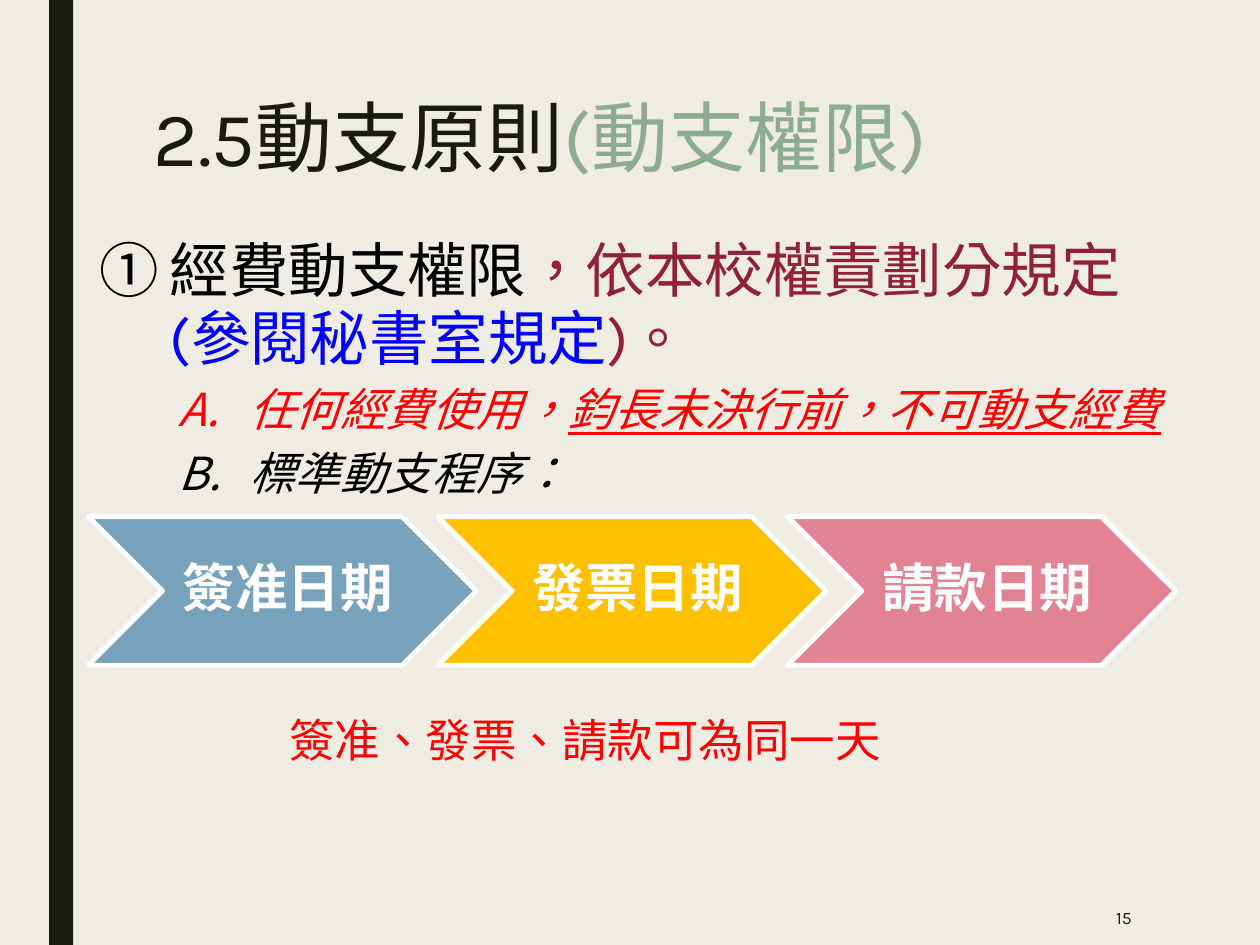
from lxml.etree import SubElement
from pptx import Presentation
from pptx.dml.color import RGBColor
from pptx.enum.lang import MSO_LANGUAGE_ID as Lang
from pptx.enum.shapes import MSO_SHAPE as Shape
from pptx.enum.text import MSO_ANCHOR as Anchor, PP_ALIGN as Align
from pptx.oxml.ns import qn
from pptx.util import Inches, Pt

CREAM = RGBColor(0xEF, 0xED, 0xE3)
DARK = RGBColor(0x19, 0x1B, 0x0E)
SAGE = RGBColor(0x8D, 0xAB, 0x8E)
WINE = RGBColor(0x91, 0x22, 0x36)
BLACK = RGBColor(0, 0, 0)
BLUE = RGBColor(0, 0, 0xFF)
RED = RGBColor(0xFF, 0, 0)
WHITE = RGBColor(0xFF, 0xFF, 0xFF)
STEEL = RGBColor(0x77, 0xA2, 0xBB)
GOLD = RGBColor(0xFF, 0xC0, 0)
ROSE = RGBColor(0xE2, 0x83, 0x94)


class Deck:
    """Draws styled elements on a slide ruled in 100 columns and 75 rows."""

    def __init__(self):
        self.prs = Presentation()
        self.prs.slide_width, self.prs.slide_height = Inches(10), Inches(7.5)
        self.col = self.prs.slide_width / 100
        self.row = self.prs.slide_height / 75
        self.font = "Karla"
        self.slide = self.prs.slides.add_slide(self.prs.slide_layouts[6])
        fill = self.slide.background.fill
        fill.solid()
        fill.fore_color.rgb = CREAM

    def place(self, x, y, w, h):
        return [int(n) for n in (x * self.col, y * self.row, w * self.col, h * self.row)]

    def style(self, run, size, color, font=None, bold=None, italic=None, under=None):
        face = run.font
        face.name, face.size, face.color.rgb = font or self.font, Pt(size), color
        face.bold, face.italic, face.underline = bold, italic, under
        face.language_id = Lang.TRADITIONAL_CHINESE

    def shape(self, kind, box, fill):
        shape = self.slide.shapes.add_shape(kind, *self.place(*box))
        shape.shadow.inherit = False
        shape.fill.solid()
        shape.fill.fore_color.rgb = fill
        shape.line.fill.background()
        return shape

    def text(self, box, anchor=Anchor.TOP):
        frame = self.slide.shapes.add_textbox(*self.place(*box)).text_frame
        frame.word_wrap, frame.vertical_anchor = True, anchor
        return frame

    def runs(self, para, size, parts, italic=None, space=None):
        para.line_spacing = space
        for words, color, under in parts:
            run = para.add_run()
            run.text = words
            self.style(run, size, color, italic=italic, under=under)

    def label(self, box, words, size, color, align):
        para = self.text(box, Anchor.MIDDLE).paragraphs[0]
        para.text, para.alignment = words, align
        self.style(para.runs[0], size, color)

    def number(self, para, kind, left, level, before):
        para.level, para.space_before, para.space_after = level, Pt(before), Pt(2)
        props = para._p.get_or_add_pPr()
        props.set("marL", str(Inches(left)))
        props.set("indent", str(Inches(-0.56)))
        SubElement(props, qn("a:buFont"), typeface="+mj-lt")
        SubElement(props, qn("a:buAutoNum"), type=kind)

    def step(self, box, words, fill):
        shape = self.shape(Shape.CHEVRON, box, fill)
        shape.line.color.rgb, shape.line.width = WHITE, Pt(2.75)
        frame = shape.text_frame
        frame.text, frame.word_wrap = words, True
        frame.vertical_anchor = Anchor.MIDDLE
        frame.margin_left = Inches(0.13)
        frame.margin_right = frame.margin_top = frame.margin_bottom = Inches(0.04)
        para = frame.paragraphs[0]
        para.alignment, para.line_spacing = Align.CENTER, 0.9
        self.style(para.runs[0], 30, WHITE, "Noto Sans CJK SC", bold=True)


def main():
    deck = Deck()
    deck.shape(Shape.RECTANGLE, (3.9, 0, 1.9, 75), DARK)

    title = deck.text((11.2, 7.5, 78.8, 16.2))
    deck.runs(title.paragraphs[0], 44,
              [("2.5動支原則", DARK, None), ("(動支權限)", SAGE, None)], space=0.89)

    body = deck.text((6.9, 18.5, 86.2, 47.6))
    rule = body.paragraphs[0]
    deck.number(rule, "circleNumWdWhitePlain", 0.56, 0, 10)
    deck.runs(rule, 34, [("經費動支權限", BLACK, None), ("，依本校權責劃分規定", WINE, None),
                         ("(參閱秘書室規定", BLUE, None), (")。", WINE, None)], space=0.94)
    points = [
        [("任何經費使用，", RED, None), ("鈞長未決行前，不可動支經費", RED, True)],
        [("標準動支程序：", BLACK, None)],
    ]
    for parts in points:
        para = body.add_paragraph()
        deck.number(para, "alphaUcPeriod", 1.19, 1, 5)
        deck.runs(para, 26, parts, italic=True, space=0.94)

    steps = [("簽准日期", STEEL), ("發票日期", GOLD), ("請款日期", ROSE)]
    for i, (words, fill) in enumerate(steps):
        deck.step((7 + 27.75 * i, 41, 30.8, 11.8), words, fill)

    deck.label((12.2, 54.1, 68.5, 9.2), "簽准、發票、請款可為同一天", 26, RED, Align.CENTER)
    deck.label((77.7, 70.6, 13.1, 4.4), "15", 10, DARK, Align.RIGHT)
    deck.prs.save("out.pptx")


if __name__ == "__main__":
    main()
